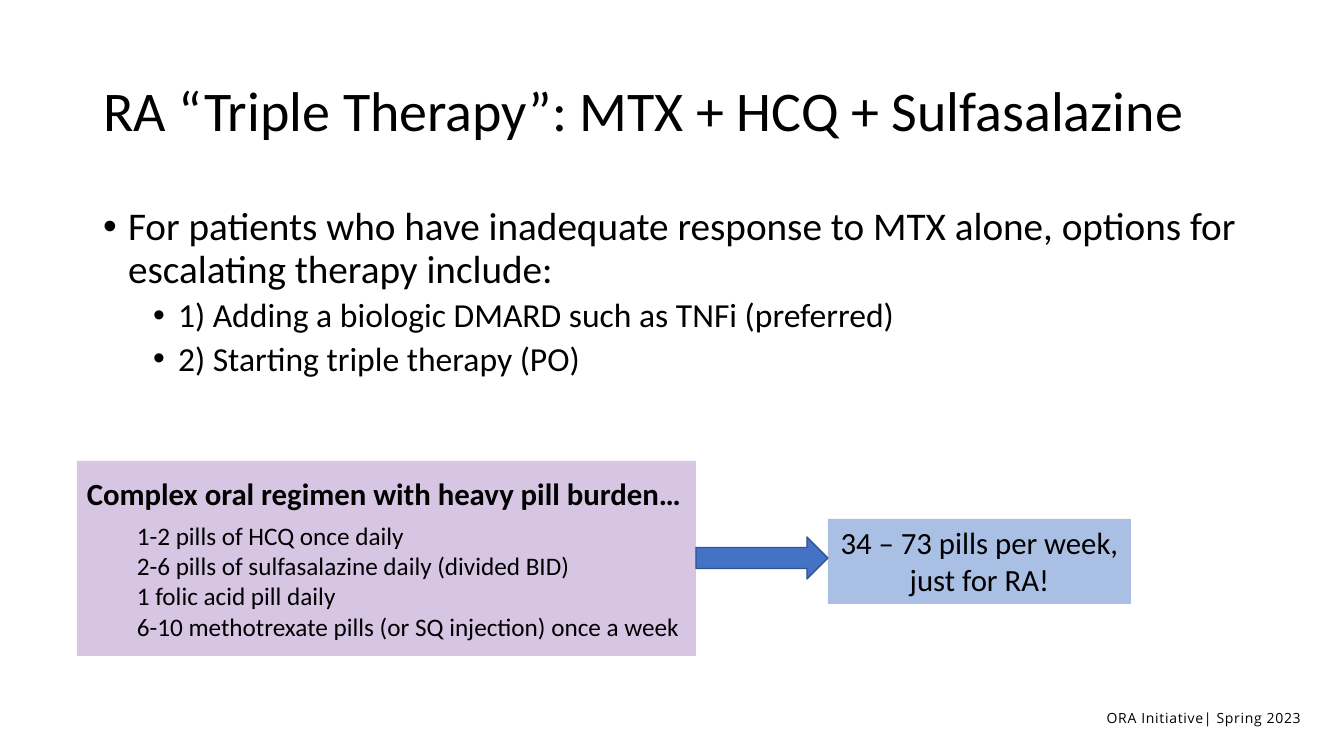
import pptx
import pptx.util
import pptx.dml.color
import pptx.enum.shapes
import pptx.enum.text
import pptx.oxml.ns
import lxml.etree

Pt = pptx.util.Pt
RGBColor = pptx.dml.color.RGBColor
SHAPE = pptx.enum.shapes.MSO_SHAPE
ALIGN = pptx.enum.text.PP_ALIGN
ANCHOR = pptx.enum.text.MSO_ANCHOR
qn = pptx.oxml.ns.qn

BLACK = RGBColor(0x00, 0x00, 0x00)
PURPLE = RGBColor(0x70, 0x30, 0xA0)
BLUE = RGBColor(0x44, 0x72, 0xC4)
DARK_BLUE = RGBColor(0x32, 0x54, 0x91)

TITLE = "RA “Triple Therapy”: MTX + HCQ + Sulfasalazine"
OPTIONS = [
    (0, "For patients who have inadequate response to MTX alone, "
        "options for escalating therapy include:"),
    (1, "1) Adding a biologic DMARD such as TNFi (preferred)"),
    (1, "2) Starting triple therapy (PO)"),
]
REGIMEN_HEADING = "Complex oral regimen with heavy pill burden…"
REGIMEN = [
    "1-2 pills of HCQ once daily",
    "2-6 pills of sulfasalazine daily (divided BID)",
    "1 folic acid pill daily",
    "6-10 methotrexate pills (or SQ injection) once a week",
]
PILL_COUNT = "34 – 73 pills per week, just for RA!"
FOOTER = "ORA Initiative| Spring 2023"

# left, top, width, height in px
TITLE_BOX = (93, 40, 1159, 146)
OPTIONS_BOX = (93, 202, 1159, 226)
REGIMEN_BOX = (77, 461, 619, 195)
COUNT_BOX = (828, 519, 303, 85)
ARROW_TOP, ARROW_HEIGHT = 537, 42
FOOTER_BOX = (1050, 710, 251, 17)
INDENT, HANGING = 50, 25
LEVEL_STYLE = [(28, 10), (24, 5)]  # size and space before, in points


def px(n):
    return pptx.util.Emu(round(n * 914400 / 100.8))


def place(sp, box):
    sp.left, sp.top, sp.width, sp.height = map(px, box)


def add_run(p, text, size, bold=False, font="Calibri"):
    r = p.add_run()
    r.text = text
    r.font.size, r.font.bold, r.font.name = Pt(size), bold, font
    r.font.color.rgb = BLACK
    return r


def next_paragraph(tf):
    """Return the first paragraph while it is empty, then new ones."""
    return tf.add_paragraph() if tf.paragraphs[0].runs else tf.paragraphs[0]


def set_indent(p, left, first=0):
    pPr = p._p.get_or_add_pPr()
    pPr.set("marL", str(px(left)))
    pPr.set("indent", str(px(first)))
    return pPr


def add_block(slide, kind, box, color, opacity=100):
    sp = slide.shapes.add_shape(kind, *map(px, box))
    sp.shadow.inherit = False
    sp.fill.solid()
    sp.fill.fore_color.rgb = color
    sp.line.fill.background()
    sp.text_frame.word_wrap = True
    if opacity < 100:
        clr = sp._element.spPr.find(qn("a:solidFill"))[0]
        lxml.etree.SubElement(clr, qn("a:alpha")).set("val", str(opacity * 1000))
    return sp


def add_title_and_options(slide):
    title, body = slide.shapes.title, slide.placeholders[1]
    place(title, TITLE_BOX)
    place(body, OPTIONS_BOX)
    for sp in (title, body):
        sp.text_frame.word_wrap = True
        sp.text_frame.auto_size = pptx.enum.text.MSO_AUTO_SIZE.NONE
    title.text_frame.vertical_anchor = ANCHOR.MIDDLE
    p = title.text_frame.paragraphs[0]
    p.alignment, p.line_spacing = ALIGN.LEFT, 0.9
    add_run(p, TITLE, 40)

    for level, text in OPTIONS:
        size, before = LEVEL_STYLE[level]
        p = next_paragraph(body.text_frame)
        p.level, p.line_spacing, p.space_before = level, 0.9, Pt(before)
        pPr = set_indent(p, HANGING + level * INDENT, -HANGING)
        lxml.etree.SubElement(pPr, qn("a:buFont")).set("typeface", "Arial")
        lxml.etree.SubElement(pPr, qn("a:buChar")).set("char", "•")
        add_run(p, text, size)


def add_regimen(slide):
    tf = add_block(slide, SHAPE.RECTANGLE, REGIMEN_BOX, PURPLE, 28).text_frame
    tf.vertical_anchor = ANCHOR.TOP
    tf.margin_top = px(14)
    p = next_paragraph(tf)
    p.alignment, p.space_after = ALIGN.LEFT, Pt(6)
    add_run(p, REGIMEN_HEADING, 22, bold=True)
    for text in REGIMEN:
        p = next_paragraph(tf)
        p.alignment = ALIGN.LEFT
        set_indent(p, INDENT)
        add_run(p, text, 18)


def add_pill_count(slide):
    tf = add_block(slide, SHAPE.RECTANGLE, COUNT_BOX, BLUE, 45).text_frame
    tf.vertical_anchor = ANCHOR.TOP
    p = next_paragraph(tf)
    p.alignment = ALIGN.CENTER
    add_run(p, PILL_COUNT, 22)

    left = REGIMEN_BOX[0] + REGIMEN_BOX[2]
    box = (left, ARROW_TOP, COUNT_BOX[0] - left, ARROW_HEIGHT)
    arrow = add_block(slide, SHAPE.RIGHT_ARROW, box, BLUE)
    arrow.line.color.rgb = DARK_BLUE
    arrow.line.width = Pt(1)


def add_footer(slide):
    tf = slide.shapes.add_textbox(*map(px, FOOTER_BOX)).text_frame
    tf.word_wrap = True
    tf.margin_left = tf.margin_right = tf.margin_top = tf.margin_bottom = 0
    p = next_paragraph(tf)
    p.alignment, p.line_spacing = ALIGN.RIGHT, Pt(12)
    r = add_run(p, FOOTER, 10, font="Open Sans")
    r.font._element.set("spc", "50")


def main():
    prs = pptx.Presentation()
    prs.slide_width, prs.slide_height = px(1344), px(756)
    slide = prs.slides.add_slide(prs.slide_layouts[1])
    add_title_and_options(slide)
    add_regimen(slide)
    add_pill_count(slide)
    add_footer(slide)
    prs.save("out.pptx")


if __name__ == "__main__":
    main()
